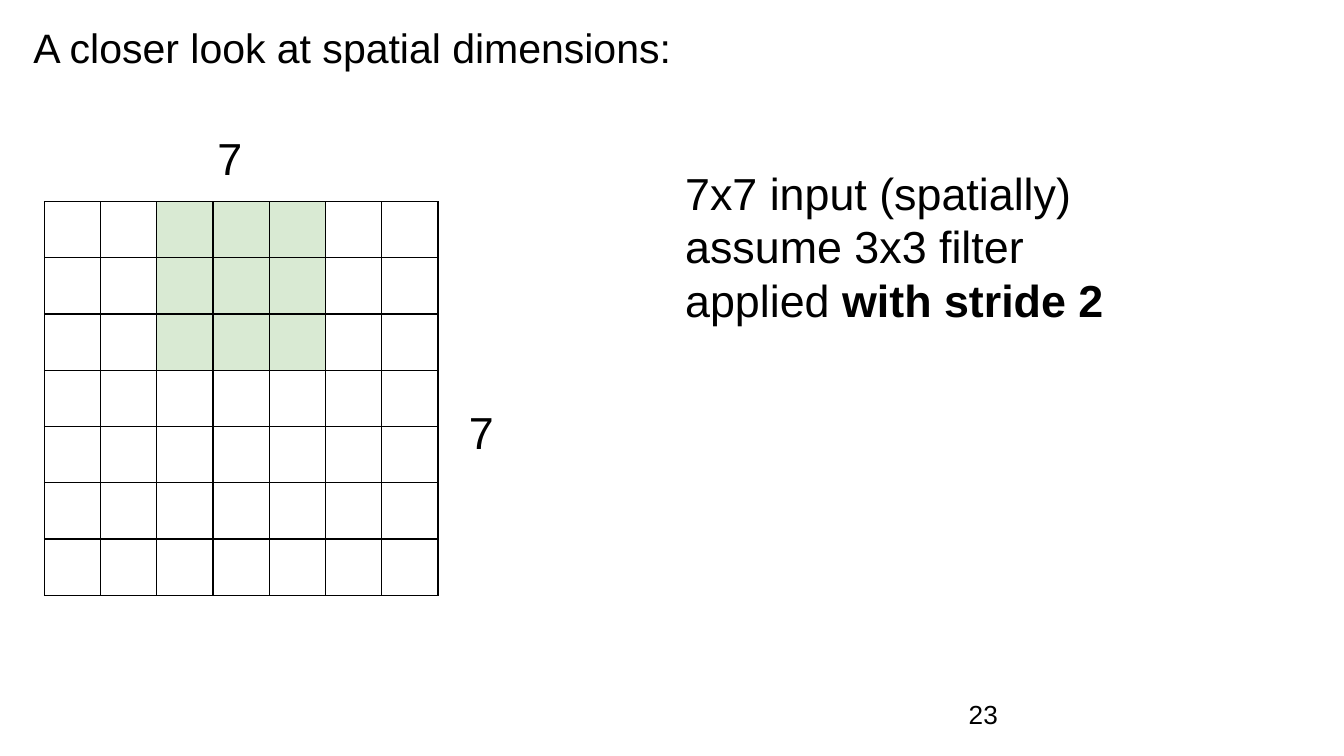
from pptx import Presentation
from pptx.dml.color import RGBColor
from pptx.enum.text import MSO_ANCHOR
from pptx.oxml import parse_xml
from pptx.oxml.ns import nsdecls
from pptx.util import Inches, Pt

WIDE = 10
HIGH = WIDE * 9 / 16
HUES = {"ink": "000000", "plain": "FFFFFF", "filter": "D9EAD3"}
FONT = "Arial"

TEXTS = [
    ((7.11, 5.1, 0.6, 0.43), 14, "middle", [[("23", False)]]),
    ((5, 1.13, 5.6, 2.01), 24, "top", [
        [("7x7 input (spatially)", False)],
        [("assume 3x3 filter", False)],
        [("applied ", False), ("with stride 2", True)],
    ]),
    ((1.52, 0.87, 0.6, 0.5), 24, "top", [[("7", False)]]),
    ((3.39, 2.91, 0.64, 0.31), 24, "top", [[("7", False)]]),
    ((0.15, 0.07, 9.16, 0.66), 22, "top", [[("A closer look at spatial dimensions:", False)]]),
]

GRID = {"left": 0.33, "top": 1.5, "side": 2.93, "count": 7}
FILTER = {"size": 3, "col": 2}
ANCHOR = {"top": MSO_ANCHOR.TOP, "middle": MSO_ANCHOR.MIDDLE}


def add_text(slide, place, size, anchor, lines):
    box = slide.shapes.add_textbox(*map(Inches, place))
    frame = box.text_frame
    frame.word_wrap = True
    frame.vertical_anchor = ANCHOR[anchor]
    frame.margin_left = frame.margin_right = Inches(0.1)
    frame.margin_top = frame.margin_bottom = Inches(0.1)
    for row, line in enumerate(lines):
        para = frame.paragraphs[0] if row == 0 else frame.add_paragraph()
        for words, bold in line:
            run = para.add_run()
            run.text = words
            run.font.name = FONT
            run.font.size = Pt(size)
            run.font.bold = bold
            run.font.color.rgb = RGBColor.from_string(HUES["ink"])


def add_edges(cell):
    props = cell._tc.get_or_add_tcPr()
    for row, side in enumerate(("lnL", "lnR", "lnT", "lnB")):
        props.insert(row, parse_xml(
            f'<a:{side} {nsdecls("a")} w="{Pt(0.75)}"><a:solidFill>'
            f'<a:srgbClr val="{HUES["ink"]}"/></a:solidFill></a:{side}>'))


def add_grid(slide):
    count, side = GRID["count"], Inches(GRID["side"])
    frame = slide.shapes.add_table(
        count, count, Inches(GRID["left"]), Inches(GRID["top"]), side, side)
    table = frame.table
    table.first_row = table.horz_banding = False
    size, start = FILTER["size"], FILTER["col"]
    for row in range(count):
        for col in range(count):
            cell = table.cell(row, col)
            cell.margin_left = cell.margin_right = 0
            cell.margin_top = cell.margin_bottom = 0
            if row < size:
                hue = "filter" if start <= col < start + size else "plain"
                cell.fill.solid()
                cell.fill.fore_color.rgb = RGBColor.from_string(HUES[hue])
            else:
                cell.fill.background()
            add_edges(cell)


def main():
    deck = Presentation()
    deck.slide_width, deck.slide_height = Inches(WIDE), Inches(HIGH)
    slide = deck.slides.add_slide(deck.slide_layouts[6])
    for text in TEXTS:
        add_text(slide, *text)
    add_grid(slide)
    deck.save("out.pptx")


if __name__ == "__main__":
    main()
